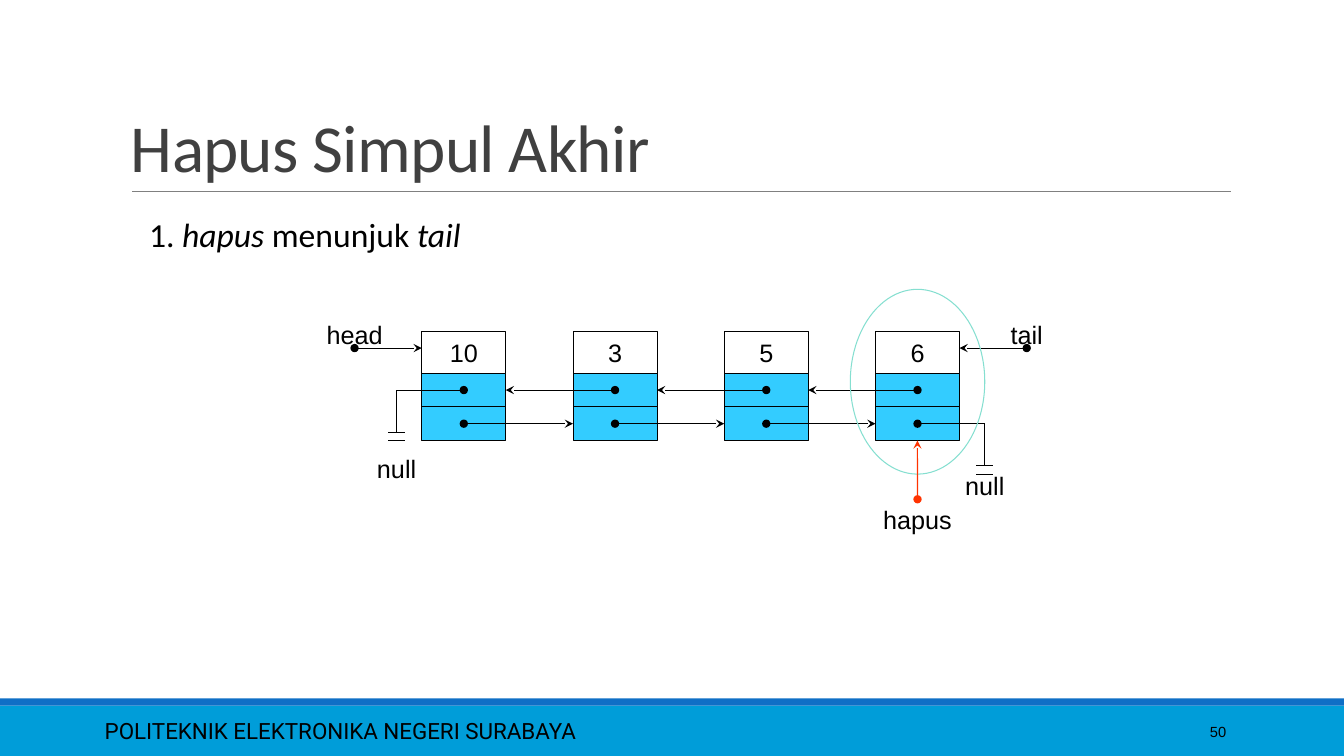
from itertools import pairwise

from lxml.etree import SubElement
from pptx import Presentation
from pptx.dml.color import RGBColor
from pptx.enum.shapes import MSO_CONNECTOR, MSO_SHAPE
from pptx.enum.text import MSO_ANCHOR, PP_ALIGN
from pptx.oxml.ns import qn
from pptx.util import Inches, Pt

BLACK = RGBColor(0, 0, 0)
DARK = RGBColor(0x40, 0x40, 0x40)
GRAY = RGBColor(0x80, 0x80, 0x80)
SKY = RGBColor(0, 0x9D, 0xD9)
BLUE = RGBColor(0x0F, 0x6F, 0xC6)
CYAN = RGBColor(0x33, 0xCC, 0xFF)
MINT = RGBColor(0x85, 0xDF, 0xD0)
RED = RGBColor(0xFF, 0x33, 0)

WIDE, HIGH = 13.33, 7.5
UNIT = 1 / 12
CELL, PITCH = 10, 18


def draw_shape(slide, kind, box, fill=None, edge=None):
    shape = slide.shapes.add_shape(kind, *map(Inches, box))
    shape.shadow.inherit = False
    if fill is None:
        shape.fill.background()
    else:
        shape.fill.solid()
        shape.fill.fore_color.rgb = fill
    if edge is None:
        shape.line.fill.background()
    else:
        shape.line.color.rgb = edge
        shape.line.width = Pt(0.75)
    return shape


def draw_line(slide, start, end, color=BLACK, width=0.75, dot=False, arrow=False):
    line = slide.shapes.add_connector(
        MSO_CONNECTOR.STRAIGHT, *map(Inches, (*start, *end)))
    line.line.color.rgb = color
    line.line.width = Pt(width)
    edge = line.line._get_or_add_ln()
    if dot:
        SubElement(edge, qn("a:headEnd"), type="oval")
    if arrow:
        SubElement(edge, qn("a:tailEnd"), type="stealth")
    SubElement(line._element.spPr, qn("a:effectLst"))
    return line


def style(para, size, font="Arial", color=BLACK, align=PP_ALIGN.LEFT):
    para.alignment = align
    para.font.size = Pt(size)
    para.font.name = font
    para.font.color.rgb = color


def add_text(slide, box, text, size, font="Arial", color=BLACK,
             align=PP_ALIGN.LEFT, anchor=MSO_ANCHOR.TOP):
    frame = slide.shapes.add_textbox(*map(Inches, box)).text_frame
    frame.word_wrap = True
    frame.vertical_anchor = anchor
    para = frame.paragraphs[0]
    para.text = text
    style(para, size, font, color, align)
    return para


def draw_footer(slide, top):
    draw_shape(slide, MSO_SHAPE.RECTANGLE, (0, top + 0.07, WIDE, HIGH - top - 0.07), SKY)
    draw_shape(slide, MSO_SHAPE.RECTANGLE, (0, top, WIDE, 0.07), BLUE)
    add_text(slide, (0.94, top + 0.12, 8.41, 0.4),
             "POLITEKNIK ELEKTRONIKA NEGERI SURABAYA", 16, "Roboto",
             anchor=MSO_ANCHOR.MIDDLE)
    add_text(slide, (10.83, top + 0.13, 1.43, 0.4), "50", 10.5,
             align=PP_ALIGN.RIGHT, anchor=MSO_ANCHOR.MIDDLE)


def draw_title(slide, left, top, width, height):
    base = top + height
    draw_line(slide, (left + 0.11, base), (left + width + 0.01, base), GRAY, 0.5)
    para = add_text(slide, (left, top, width, height), "Hapus Simpul Akhir",
                    48, "Calibri", DARK, anchor=MSO_ANCHOR.BOTTOM)
    para.line_spacing = 0.85
    para.runs[0].font._element.set("spc", "-50")


def draw_step(slide, box):
    para = add_text(slide, box, "", 24, "Calibri")
    parts = (("1. ", False), ("hapus ", True), ("menunjuk ", False), ("tail", True))
    for text, slant in parts:
        run = para.add_run()
        run.text = text
        run.font.italic = slant


def draw_list(slide, left, top):
    def spot(col, row):
        return left + col * UNIT, top + row * UNIT

    def area(col, row, cols, rows):
        return *spot(col, row), cols * UNIT, rows * UNIT

    def label(col, row, cols, text):
        add_text(slide, (*spot(col, row), cols * UNIT, 0.4), text, 18,
                 align=PP_ALIGN.CENTER)

    def node(col, value):
        data, prev, after = (
            draw_shape(slide, MSO_SHAPE.RECTANGLE, area(col, row, CELL, rows), fill, BLACK)
            for row, rows, fill in ((5, 5, None), (10, 4, CYAN), (14, 4, CYAN)))
        data.text_frame.vertical_anchor = MSO_ANCHOR.MIDDLE
        para = data.text_frame.paragraphs[0]
        para.text = value
        style(para, 18, align=PP_ALIGN.CENTER)
        return col + CELL / 2, prev, after

    def ground(start, col, row, drop):
        draw_line(slide, spot(start, row), spot(col, row), dot=True)
        draw_line(slide, spot(col, row), spot(col, row + 5))
        for plate in (row + 5, row + 6):
            draw_line(slide, spot(col - 1, plate), spot(col + 1, plate))
        label(col - 4.5, row + drop, 9, "null")

    nodes = [node(13 + i * PITCH, value) for i, value in enumerate(("10", "3", "5", "6"))]
    for (mid, prev, after), (next_mid, next_prev, next_after) in pairwise(nodes):
        ahead = draw_line(slide, spot(mid, 16), spot(next_mid - 5, 16), dot=True, arrow=True)
        ahead.end_connect(next_after, 1)
        back = draw_line(slide, spot(next_mid, 12), spot(mid + 5, 12), dot=True, arrow=True)
        back.end_connect(prev, 3)

    first, last = nodes[0][0], nodes[-1][0]
    for start, end, name in ((first - 13, first - 5, "head"), (last + 13, last + 5, "tail")):
        draw_line(slide, spot(start, 7), spot(end, 7), dot=True, arrow=True)
        label(start - 5, 3, 10, name)
    ground(first, first - 8, 12, 7)
    ground(last, last + 8, 16, 5)

    draw_shape(slide, MSO_SHAPE.OVAL, area(last - 8, 0, 16, 22), edge=MINT)
    mark = draw_line(slide, spot(last, 25), spot(last, 18), RED, dot=True, arrow=True)
    mark.end_connect(nodes[-1][2], 2)
    label(last - 7, 25, 14, "hapus")


def main():
    deck = Presentation()
    deck.slide_width, deck.slide_height = Inches(WIDE), Inches(HIGH)
    slide = deck.slides.add_slide(deck.slide_layouts[6])
    draw_footer(slide, 6.93)
    draw_title(slide, 1.2, 0.31, 11, 1.59)
    draw_step(slide, (1.38, 2.07, 8.33, 0.5))
    draw_list(slide, 3.1, 2.87)
    deck.save("out.pptx")


if __name__ == "__main__":
    main()
